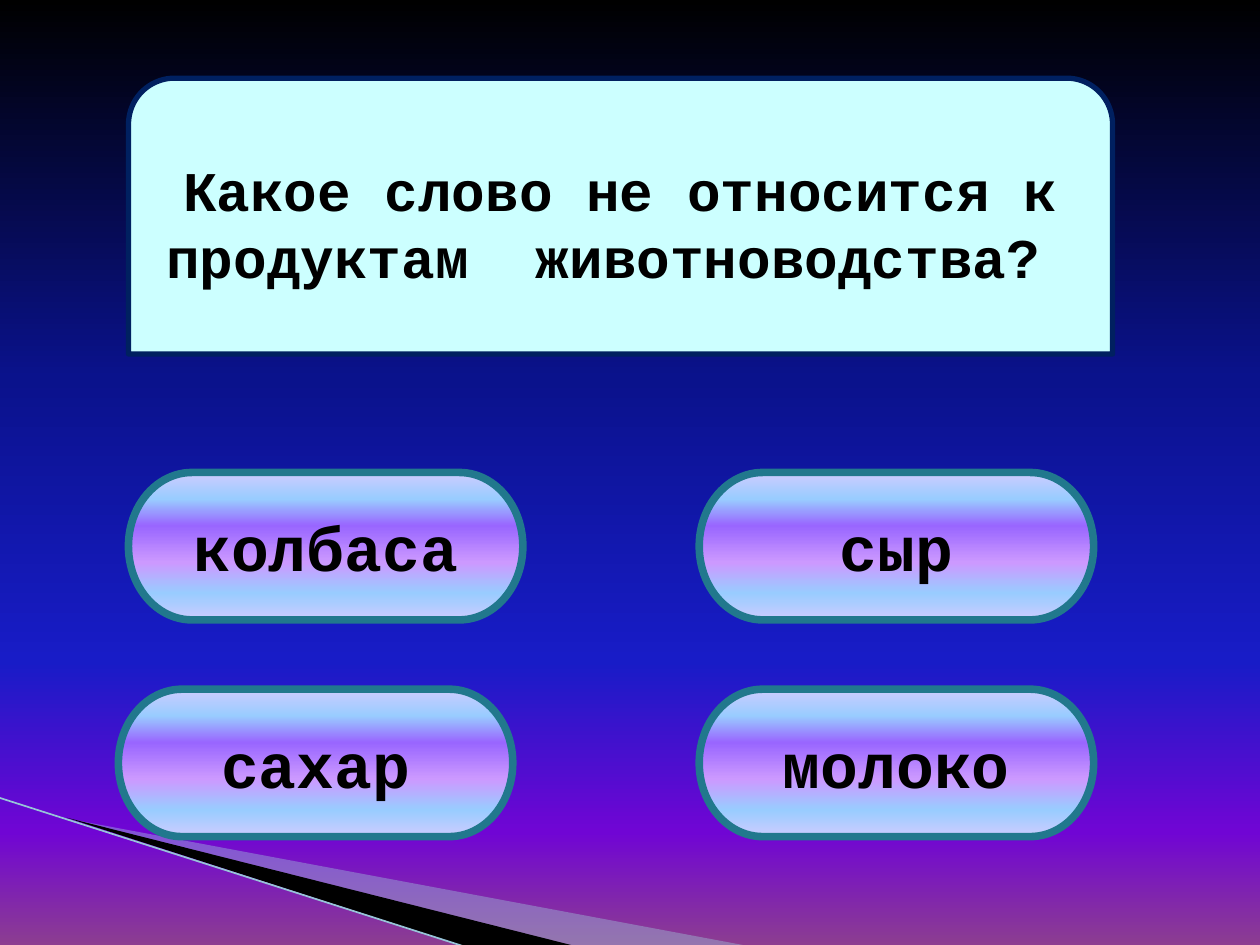
from lxml.etree import SubElement as Sub
from pptx import Presentation
from pptx.dml.color import RGBColor as RGB
from pptx.enum.shapes import MSO_CONNECTOR as Link, MSO_SHAPE as Kind
from pptx.enum.text import MSO_ANCHOR as Anchor, PP_ALIGN as Align
from pptx.oxml.ns import qn
from pptx.util import Inches, Pt

BLACK = RGB(0x00, 0x00, 0x00)
NAVY = RGB(0x00, 0x20, 0x60)
TEAL = RGB(0x21, 0x78, 0x8D)
SKY = RGB(0x97, 0xC5, 0xD8)
MIST = RGB(0xA0, 0xCB, 0xDC)
CYAN = RGB(0xCC, 0xFF, 0xFF)
LILAC = RGB(0xCC, 0xCC, 0xFF)
AZURE = RGB(0x99, 0xCC, 0xFF)
VIOLET = RGB(0x99, 0x66, 0xFF)
MAUVE = RGB(0xCC, 0x99, 0xFF)

NIGHT = [(0, BLACK), (40, RGB(0x0A, 0x12, 0x8C)), (70, RGB(0x18, 0x1C, 0xC7)),
         (88, RGB(0x70, 0x05, 0xD4)), (100, RGB(0x8C, 0x3D, 0x91))]
GLOSS = [(0, LILAC), (18, AZURE), (36, VIOLET), (61, MAUVE), (82, AZURE), (100, LILAC)]

ANSWERS = [("колбаса", 1.02, 3.75), ("сахар", 0.94, 5.47),
           ("сыр", 5.55, 3.75), ("молоко", 5.55, 5.47)]


def blend(fill, owner, stops):
    """Give the fill a top-to-bottom gradient of (percent, colour) stops."""
    fill.gradient()
    fill.gradient_angle = 270
    group = next(owner.element.iter(qn("a:gsLst")))
    for old in list(group):
        group.remove(old)
    for percent, color in stops:
        stop = Sub(group, qn("a:gs"), pos=str(percent * 1000))
        Sub(stop, qn("a:srgbClr"), val=str(color))


def write(shape, text, size, font="Courier New", color=BLACK, bold=True):
    frame = shape.text_frame
    frame.word_wrap = True
    frame.vertical_anchor = Anchor.MIDDLE
    para = frame.paragraphs[0]
    para.alignment = Align.CENTER
    run = para.add_run()
    run.text = text
    run.font.name = font
    run.font.size = Pt(size)
    run.font.bold = bold
    run.font.color.rgb = color


class Quiz:
    def __init__(self, slide):
        self.slide = slide
        self.shapes = slide.shapes
        blend(slide.background.fill, slide, NIGHT)

    def blade(self, points, color, alpha=None):
        """Draw a filled sliver, with alpha as percent of opacity."""
        spots = [(Inches(x), Inches(y)) for x, y in points]
        pen = self.shapes.build_freeform(*spots[0])
        pen.add_line_segments(spots[1:], close=True)
        shape = pen.convert_to_shape()
        shape.shadow.inherit = False
        shape.fill.solid()
        shape.fill.fore_color.rgb = color
        shape.line.fill.background()
        if alpha:
            tint = next(shape.element.spPr.iter(qn("a:srgbClr")))
            Sub(tint, qn("a:alpha"), val=str(alpha * 1000))

    def edge(self, start, end, color, width):
        ends = [Inches(v) for v in (*start, *end)]
        line = self.shapes.add_connector(Link.STRAIGHT, *ends)
        line.line.color.rgb = color
        line.line.width = Pt(width)
        Sub(line.element.spPr, qn("a:effectLst"))

    def box(self, kind, place, line, width):
        shape = self.shapes.add_shape(kind, *[Inches(v) for v in place])
        shape.shadow.inherit = False
        shape.line.color.rgb = line
        shape.line.width = Pt(width)
        return shape

    def ask(self, text, place):
        shape = self.box(Kind.ROUND_2_SAME_RECTANGLE, place, NAVY, 3)
        shape.fill.solid()
        shape.fill.fore_color.rgb = CYAN
        write(shape, text, 32)

    def answer(self, text, left, top):
        shape = self.box(Kind.FLOWCHART_TERMINATOR, (left, top, 3.13, 1.17), TEAL, 4.33)
        blend(shape.fill, shape, GLOSS)
        write(shape, text, 36)


def main():
    deck = Presentation()
    deck.slide_width, deck.slide_height = Inches(10), Inches(7.5)
    quiz = Quiz(deck.slides.add_slide(deck.slide_layouts[6]))
    quiz.blade([(0.55, 6.5), (5.95, 7.51), (4.56, 7.51)], MIST, alpha=40)
    quiz.blade([(0.53, 6.49), (4.57, 7.51), (3.72, 7.52)], BLACK)
    quiz.edge((-0.01, 6.33), (3.71, 7.52), SKY, 0.95)
    quiz.ask("Какое слово не относится к продуктам  животноводства? ",
             (1.02, 0.62, 7.81, 2.19))
    for text, left, top in ANSWERS:
        quiz.answer(text, left, top)
    deck.save("out.pptx")


if __name__ == "__main__":
    main()
